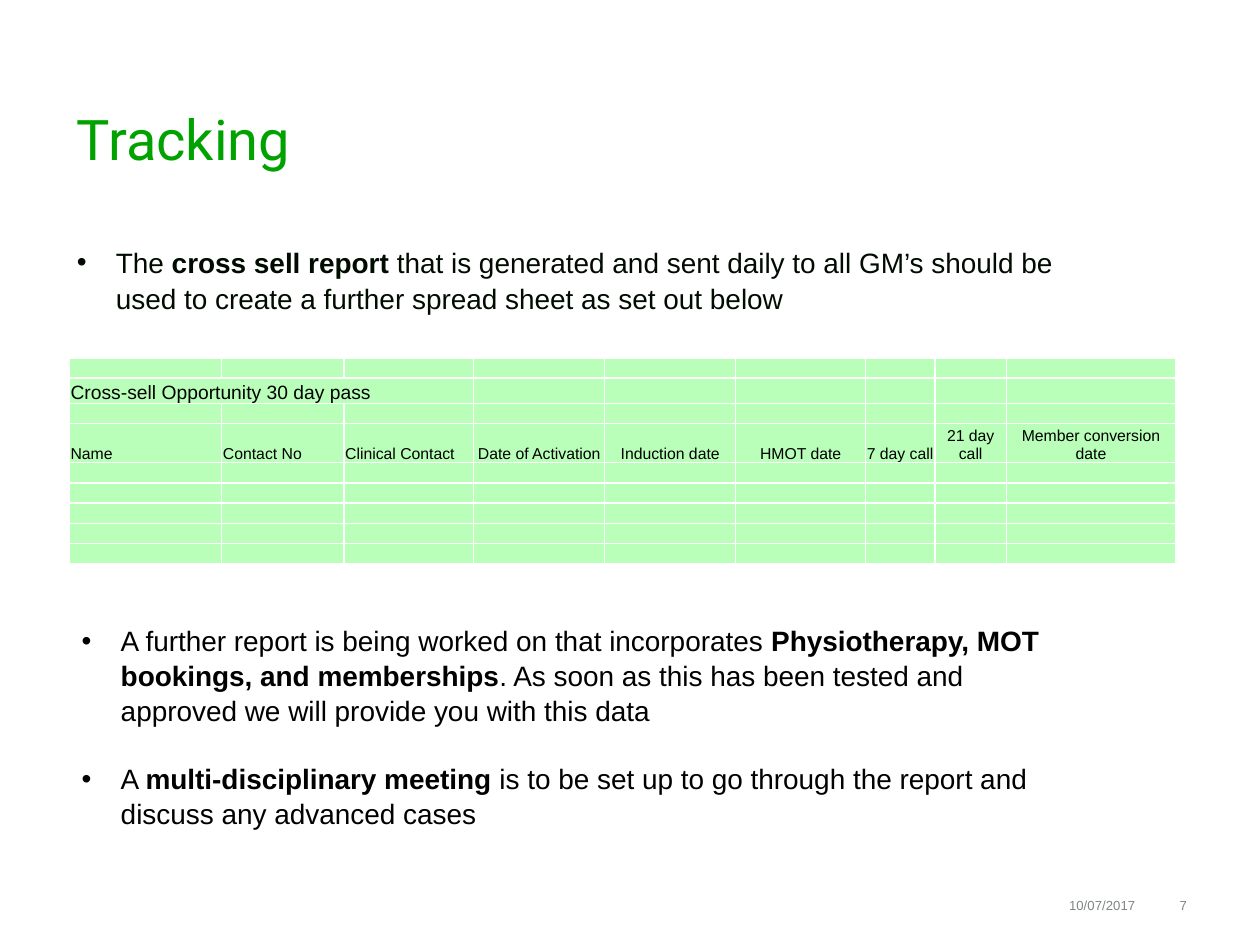
from dataclasses import dataclass

from lxml.etree import SubElement
from pptx import Presentation
from pptx.dml.color import RGBColor
from pptx.enum.text import MSO_ANCHOR, PP_ALIGN
from pptx.oxml.ns import qn
from pptx.util import Inches, Pt

GREEN = RGBColor(0x00, 0xA2, 0x00)
DARK_GREEN = RGBColor(0x00, 0x0C, 0x00)
PALE_GREEN = RGBColor(0xB9, 0xFF, 0xB9)
GREY = RGBColor(0x80, 0x86, 0x80)
BLACK = RGBColor(0x00, 0x00, 0x00)


@dataclass(frozen=True)
class TextStyle:
    """Look of a paragraph."""
    size: float
    color: RGBColor
    font: str = "Arial"
    align: PP_ALIGN = PP_ALIGN.LEFT
    line_spacing: float | Pt | None = None
    space_before: float = 0
    bullet: bool = False


@dataclass(frozen=True)
class TextBlock:
    """Placed text; every second part of a paragraph is bold."""
    left: float
    top: float
    width: float
    height: float
    paragraphs: list[list[str]]
    style: TextStyle
    inset_x: float = 0
    inset_y: float = 0


@dataclass(frozen=True)
class Column:
    """Heading and width of a tracking column."""
    heading: str
    width: float
    align: PP_ALIGN = PP_ALIGN.CENTER


BLOCKS = [
    TextBlock(0.61, 0.86, 8.78, 0.96, [["Tracking"]],
              TextStyle(32, GREEN, "Roboto", line_spacing=Pt(36))),
    TextBlock(0.61, 1.92, 8.27, 0.97,
              [["The ", "cross sell report ",
                "that is generated and sent daily to all GM’s should be used to create "
                "a further spread sheet as set out below"]],
              TextStyle(16, DARK_GREEN, line_spacing=Pt(21), bullet=True)),
    TextBlock(8.44, 7.12, 0.57, 0.24, [["10/07/2017"]],
              TextStyle(7.5, GREY, align=PP_ALIGN.RIGHT)),
    TextBlock(9.07, 7.12, 0.35, 0.24, [["7"]],
              TextStyle(7.5, GREY, align=PP_ALIGN.RIGHT)),
    TextBlock(0.55, 4.89, 8.18, 1.72,
              [["A further report is being worked on that incorporates ",
                "Physiotherapy, MOT bookings, and memberships",
                ". As soon as this has been tested and approved we will provide you "
                "with this data"],
               ["A ", "multi-disciplinary meeting ",
                "is to be set up to go through the report and discuss any advanced cases"]],
              TextStyle(16, BLACK, line_spacing=1.04, space_before=19, bullet=True),
              inset_x=0.1, inset_y=0.05),
]

COLUMNS = [
    Column("Name", 1.21, PP_ALIGN.LEFT),
    Column("Contact No", 0.97, PP_ALIGN.LEFT),
    Column("Clinical Contact", 1.03, PP_ALIGN.LEFT),
    Column("Date of Activation", 1.04),
    Column("Induction date", 1.04),
    Column("HMOT date", 1.03),
    Column("7 day call", 0.55),
    Column("21 day call", 0.57),
    Column("Member conversion date", 1.34),
]
ROW_COUNT = 9
CAPTION_ROW = 1
HEADING_ROW = 3
ROW_HEIGHT = 0.16
CAPTION_HEIGHT = 0.2


def style_paragraph(paragraph, style: TextStyle) -> None:
    """Apply a text style to a paragraph."""
    if style.bullet:
        properties = paragraph._p.get_or_add_pPr()
        properties.set("marL", str(Inches(0.31)))
        properties.set("indent", str(-Inches(0.31)))
        SubElement(properties, qn("a:buFont"), typeface="Arial")
        SubElement(properties, qn("a:buChar"), char="•")
    paragraph.alignment = style.align
    if style.line_spacing is not None:
        paragraph.line_spacing = style.line_spacing
    paragraph.font.size = Pt(style.size)
    paragraph.font.name = style.font
    paragraph.font.color.rgb = style.color


def add_text_block(slide, block: TextBlock) -> None:
    """Add a text box with its paragraphs."""
    frame = slide.shapes.add_textbox(Inches(block.left), Inches(block.top),
                                     Inches(block.width), Inches(block.height)).text_frame
    frame.word_wrap = True
    frame.margin_left = frame.margin_right = Inches(block.inset_x)
    frame.margin_top = frame.margin_bottom = Inches(block.inset_y)
    for index, parts in enumerate(block.paragraphs):
        paragraph = frame.add_paragraph() if index else frame.paragraphs[0]
        style_paragraph(paragraph, block.style)
        if index:
            paragraph.space_before = Pt(block.style.space_before)
        for position, part in enumerate(parts):
            run = paragraph.add_run()
            run.text = part
            if position % 2:
                run.font.bold = True


def format_cell(cell) -> None:
    """Give a cell its fill, white borders, margins and a small empty line."""
    properties = cell._tc.get_or_add_tcPr()
    for side in ("a:lnL", "a:lnR", "a:lnT", "a:lnB"):
        border = SubElement(properties, qn(side), w=str(Pt(1)))
        SubElement(SubElement(border, qn("a:solidFill")), qn("a:srgbClr"), val="FFFFFF")
    cell.fill.solid()
    cell.fill.fore_color.rgb = PALE_GREEN
    cell.margin_left = cell.margin_right = cell.margin_top = Inches(0.01)
    cell.margin_bottom = 0
    cell.vertical_anchor = MSO_ANCHOR.BOTTOM
    ending = SubElement(cell.text_frame.paragraphs[0]._p, qn("a:endParaRPr"), sz="900")
    SubElement(ending, qn("a:latin"), typeface="Arial")


def write_cell(cell, text: str, style: TextStyle) -> None:
    """Write styled text into a cell."""
    paragraph = cell.text_frame.paragraphs[0]
    style_paragraph(paragraph, style)
    paragraph.add_run().text = text


def add_tracking_table(slide) -> None:
    """Add the cross-sell tracking table."""
    width = sum(column.width for column in COLUMNS)
    height = ROW_HEIGHT * (ROW_COUNT - 1) + CAPTION_HEIGHT
    table = slide.shapes.add_table(ROW_COUNT, len(COLUMNS), Inches(0.55), Inches(2.84),
                                   Inches(width), Inches(height)).table
    table.first_row = table.horz_banding = False
    for index, row in enumerate(table.rows):
        row.height = Inches(CAPTION_HEIGHT if index == CAPTION_ROW else ROW_HEIGHT)
    for cell in table.iter_cells():
        format_cell(cell)
    for index, column in enumerate(COLUMNS):
        table.columns[index].width = Inches(column.width)
        write_cell(table.cell(HEADING_ROW, index), column.heading,
                   TextStyle(9, BLACK, align=column.align))
    caption = table.cell(CAPTION_ROW, 0)
    caption.merge(table.cell(CAPTION_ROW, 2))
    write_cell(caption, "Cross-sell Opportunity 30 day pass", TextStyle(11, BLACK))


def main() -> None:
    """Build the tracking slide."""
    presentation = Presentation()
    presentation.slide_width = Inches(10)
    presentation.slide_height = Inches(7.5)
    slide = presentation.slides.add_slide(presentation.slide_layouts[6])
    for block in BLOCKS[:-1]:
        add_text_block(slide, block)
    add_tracking_table(slide)
    add_text_block(slide, BLOCKS[-1])
    presentation.save("out.pptx")


if __name__ == "__main__":
    main()
